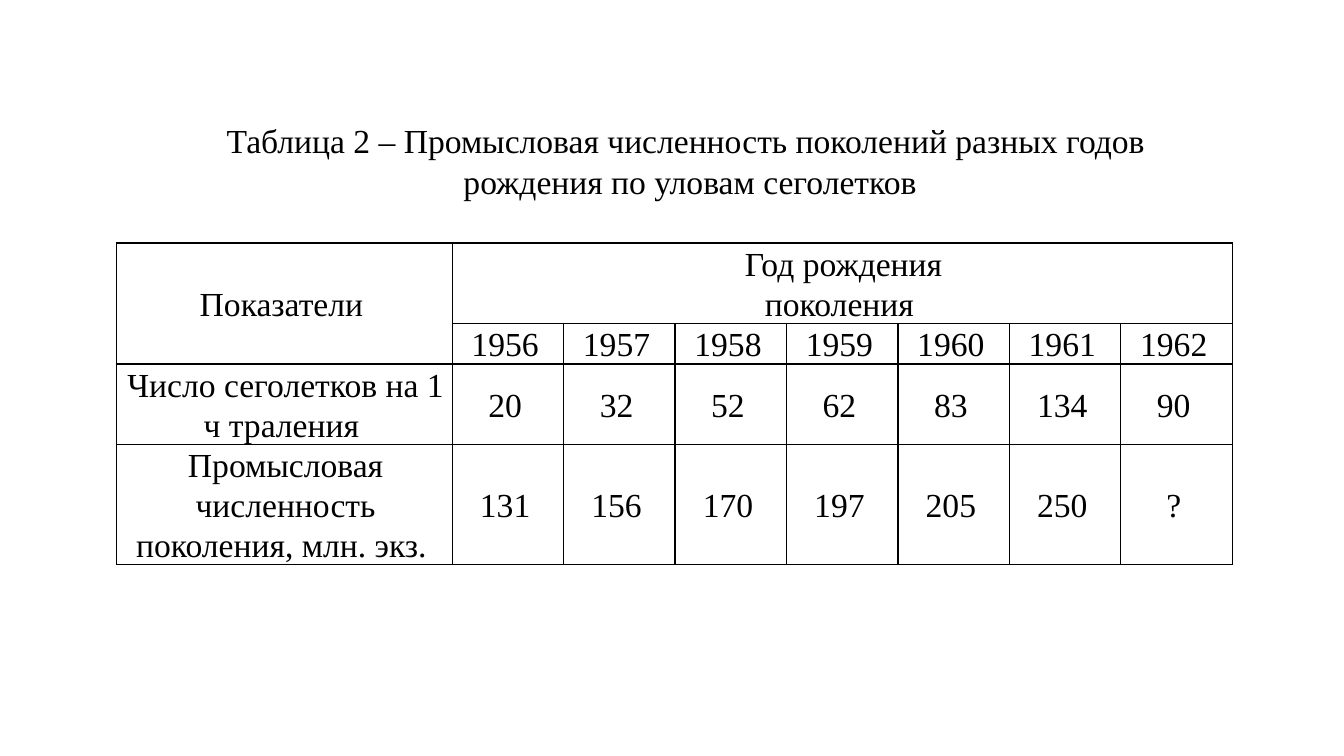
from dataclasses import dataclass

from lxml import etree
from pptx import Presentation
from pptx import util as u
from pptx.dml.color import RGBColor
from pptx.enum import text
from pptx.oxml import ns


@dataclass(frozen=True)
class Theme:
    font: str = "Times New Roman"
    size: int = 24
    ink: str = "000000"


theme = Theme()
YEARS = range(1956, 1963)
CATCHES = [20, 32, 52, 62, 83, 134, 90]
STOCKS = [131, 156, 170, 197, 205, 250, "?"]
LABEL_WIDTH, YEAR_WIDTH = 240, 79.6
ROW_HEIGHTS = [57, 28.6, 57, 85.5]


def write(para, words):
    para.alignment = text.PP_ALIGN.CENTER
    span = para.add_run()
    span.text = words
    span.font.name = theme.font
    span.font.size = u.Pt(theme.size)
    span.font.color.rgb = RGBColor.from_string(theme.ink)


def draw_borders(cell, sides):
    """Draw the named sides (L, R, T, B) and clear the others."""
    properties = cell._tc.get_or_add_tcPr()
    for side in "LRTB":
        line = etree.SubElement(properties, ns.qn(f"a:ln{side}"), w=str(u.Pt(1)))
        if side in sides:
            fill = etree.SubElement(line, ns.qn("a:solidFill"))
            etree.SubElement(fill, ns.qn("a:srgbClr"), val=theme.ink)
        else:
            etree.SubElement(line, ns.qn("a:noFill"))


deck = Presentation()
deck.slide_width, deck.slide_height = u.Pt(960), u.Pt(540)
page = deck.slides.add_slide(deck.slide_layouts[6])

# Table
rows = [
    ["Показатели", "", "", "Год рождения поколения", "", "", "", ""],
    ["", *YEARS],
    ["Число сеголетков на 1 ч траления", *CATCHES],
    ["Промысловая численность поколения, млн. экз.", *STOCKS],
]
column_count = len(rows[0])
table = page.shapes.add_table(
    len(rows), column_count, u.Pt(83), u.Pt(173.5),
    u.Pt(LABEL_WIDTH + YEAR_WIDTH * len(YEARS)), u.Pt(sum(ROW_HEIGHTS)),
).table
table.first_row = table.horz_banding = False
for index, column in enumerate(table.columns):
    column.width = u.Pt(YEAR_WIDTH if index else LABEL_WIDTH)
for row, height in zip(table.rows, ROW_HEIGHTS):
    row.height = u.Pt(height)
table.cell(0, 0).merge(table.cell(1, 0))
table.cell(0, 3).merge(table.cell(0, 5))

cell_format = {
    "margin_left": u.Pt(5),
    "margin_top": u.Pt(0.7),
    "margin_right": u.Pt(3),
    "margin_bottom": u.Pt(0),
}
header_sides = {1: "LTB", column_count - 1: "RTB"}
for r, values in enumerate(rows):
    for c, value in enumerate(values):
        cell = table.cell(r, c)
        for name, setting in cell_format.items():
            setattr(cell, name, setting)
        centred = (r, c) == (0, 0) or (r > 1 and c > 0)
        cell.vertical_anchor = text.MSO_ANCHOR.MIDDLE if centred else text.MSO_ANCHOR.TOP
        draw_borders(cell, header_sides.get(c, "TB") if r == 0 and c else "LRTB")
        cell.fill.background()
        if value != "":
            para = cell.text_frame.paragraphs[0]
            para.line_spacing = 1.07
            write(para, f"{value} ")

# Title
box = page.shapes.add_textbox(u.Pt(151.2), u.Pt(82), u.Pt(683.3), u.Pt(65.5))
frame = box.text_frame
frame_format = {
    "word_wrap": False,
    "auto_size": text.MSO_AUTO_SIZE.SHAPE_TO_FIT_TEXT,
    "vertical_anchor": text.MSO_ANCHOR.MIDDLE,
}
for name, setting in frame_format.items():
    setattr(frame, name, setting)
write(frame.paragraphs[0], "Таблица 2 – Промысловая численность поколений разных годов ")
write(frame.add_paragraph(), "рождения по уловам сеголетков")

deck.save("out.pptx")
